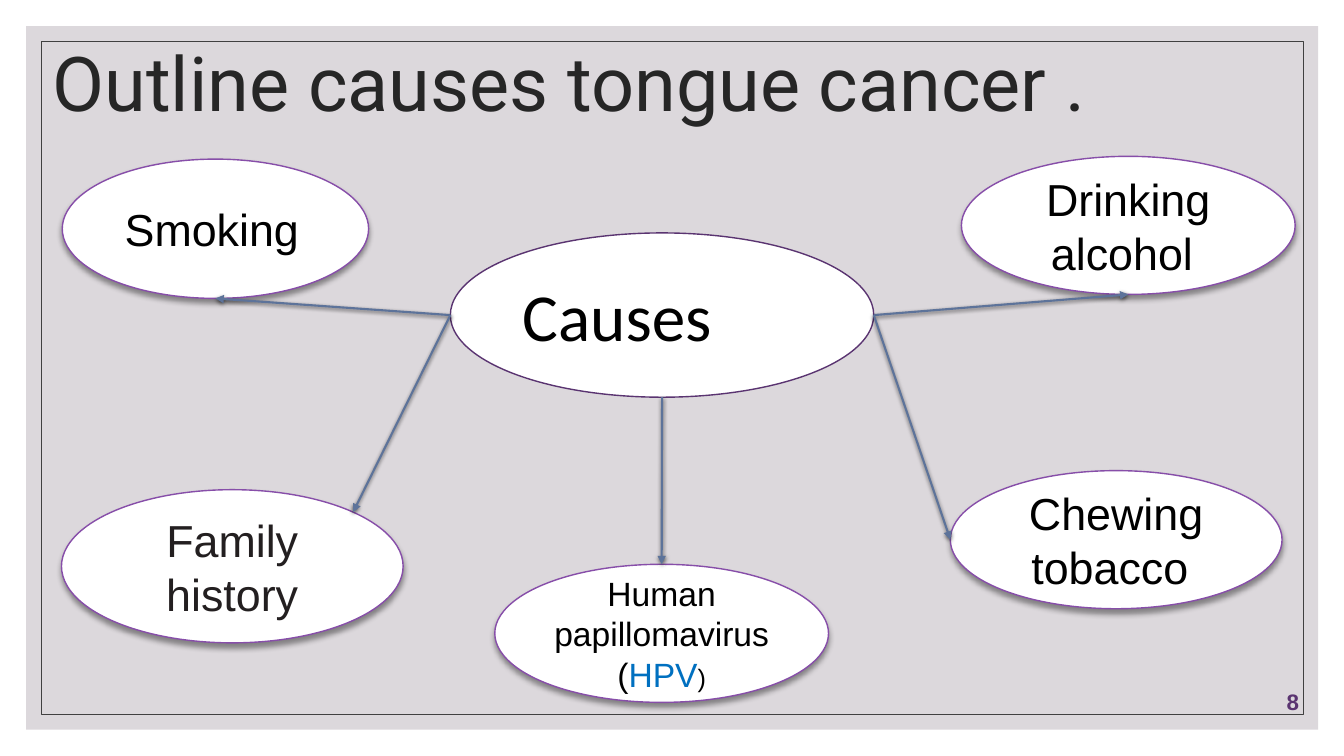
from lxml import etree
from pptx import Presentation
from pptx import util as u
from pptx.dml.color import RGBColor
from pptx.enum import shapes, text
from pptx.oxml.ns import qn

# Points on an ellipse, as fractions of its width and height
LEFT, RIGHT, TOP, BOTTOM = (0, 0.5), (1, 0.5), (0.5, 0), (0.5, 1)
TOP_RIGHT = (0.5 + 0.125 ** 0.5, 0.5 - 0.125 ** 0.5)


def color(hex_string):
    return RGBColor.from_string(hex_string)


def box(*cm):
    return [u.Cm(v) for v in cm]


def set_shadow(sp, alpha=0, blur=0, dist=0):
    """Give sp a shadow straight below it, or none when alpha is 0."""
    effects = etree.SubElement(sp._element.spPr, qn("a:effectLst"))
    if alpha:
        outer = etree.SubElement(effects, qn("a:outerShdw"), dir="5400000",
                                 blurRad=str(u.Pt(blur)), dist=str(u.Pt(dist)),
                                 rotWithShape="0")
        black = etree.SubElement(outer, qn("a:srgbClr"), val="000000")
        etree.SubElement(black, qn("a:alpha"), val=str(alpha * 1000))


def format_run(r, size, hex_string, font="Arial", bold=False):
    r.font.size = u.Pt(size)
    r.font.name = font
    r.font.bold = bold
    r.font.color.rgb = color(hex_string)


def add_panel(slide, kind, place, fill=None, line=None, width=1):
    sp = slide.shapes.add_shape(kind, *box(*place))
    if fill:
        sp.fill.solid()
        sp.fill.fore_color.rgb = color(fill)
    else:
        sp.fill.background()
    if line:
        sp.line.color.rgb = color(line)
        sp.line.width = u.Pt(width)
    else:
        sp.line.fill.background()
    return sp


def add_bubble(slide, place, runs, line="874EA9", font="Arial",
               align=text.PP_ALIGN.CENTER, shadow=(40, 4, 3)):
    sp = add_panel(slide, shapes.MSO_SHAPE.OVAL, place, "FFFFFF", line)
    set_shadow(sp, *shadow)
    tf = sp.text_frame
    tf.word_wrap = True
    tf.vertical_anchor = text.MSO_ANCHOR.MIDDLE
    p = tf.paragraphs[0]
    p.alignment = align
    for words, size, hex_string in runs:
        r = p.add_run()
        r.text = words
        format_run(r, size, hex_string, font)
    return sp


def point_on(sp, spot):
    return round(sp.left + spot[0] * sp.width), round(sp.top + spot[1] * sp.height)


def add_arrow(slide, source, start, target, end):
    line = slide.shapes.add_connector(shapes.MSO_CONNECTOR.STRAIGHT,
                                      *point_on(source, start), *point_on(target, end))
    line.line.color.rgb = color("5D739A")
    line.line.width = u.Pt(1.5)
    etree.SubElement(line.line._get_or_add_ln(), qn("a:tailEnd"), type="triangle")
    set_shadow(line, 63, 3, 1)


def add_title(slide, words):
    title = slide.shapes.title
    title.left, title.top, title.width, title.height = box(1.07, 0.86, 27.94, 2.69)
    tf = title.text_frame
    tf.text = words
    tf.word_wrap = True
    tf.auto_size = text.MSO_AUTO_SIZE.NONE
    tf.vertical_anchor = text.MSO_ANCHOR.MIDDLE
    p = tf.paragraphs[0]
    p.alignment = text.PP_ALIGN.LEFT
    p.line_spacing = 0.9
    format_run(p.runs[0], 54, "262626", "Roboto")
    slide.shapes._spTree.append(title._element)  # in front of the panels


def add_page_number(slide, number):
    tf = slide.shapes.add_textbox(*box(30.91, 17.12, 2.08, 1.02)).text_frame
    tf.text = number
    tf.word_wrap = True
    tf.vertical_anchor = text.MSO_ANCHOR.BOTTOM
    p = tf.paragraphs[0]
    p.alignment = text.PP_ALIGN.RIGHT
    format_run(p.runs[0], 16, "5A3471", bold=True)


def main():
    prs = Presentation()
    prs.slide_width, prs.slide_height = box(33.87, 19.05)
    slide = prs.slides.add_slide(prs.slide_layouts[5])

    # Background panel and thin frame
    rect = shapes.MSO_SHAPE.RECTANGLE
    set_shadow(add_panel(slide, rect, (0.66, 0.66, 32.56, 17.73), fill="DCD8DC"))
    set_shadow(add_panel(slide, rect, (1.04, 1.04, 31.8, 16.97), line="404040", width=0.5))

    # Title and page number
    add_title(slide, "Outline causes tongue cancer .")
    add_page_number(slide, "8")

    # Central bubble
    causes = add_bubble(slide, (11.35, 5.87, 10.67, 4.14), [("Causes", 48, "000000")],
                        line="5A3471", font="Calibri",
                        align=text.PP_ALIGN.LEFT, shadow=())

    # Causes around it: place, runs, arrow start and arrow end
    bubbles = [
        ((1.57, 4.01, 7.72, 3.51),
         [("Smoking", 32, "000000"), (" ", 18, "000000")], LEFT, BOTTOM),
        ((24.23, 3.94, 8.41, 3.48),
         [("Drinking alcohol ", 32, "000000")], RIGHT, BOTTOM),
        ((12.47, 14.22, 8.41, 3.48),
         [("Human papillomavirus (", 24, "000000"), ("HPV", 24, "0070C0"),
          (")", 18, "000000")], BOTTOM, TOP),
        ((1.55, 12.34, 8.61, 3.86),
         [("Family history", 32, "231F20")], LEFT, TOP_RIGHT),
        ((23.95, 11.86, 8.36, 3.48),
         [("Chewing tobacco ", 32, "000000")], RIGHT, LEFT),
    ]
    arrows = [(start, add_bubble(slide, place, runs), end)
              for place, runs, start, end in bubbles]
    for start, bubble, end in arrows:
        add_arrow(slide, causes, start, bubble, end)

    prs.save("out.pptx")


if __name__ == "__main__":
    main()
